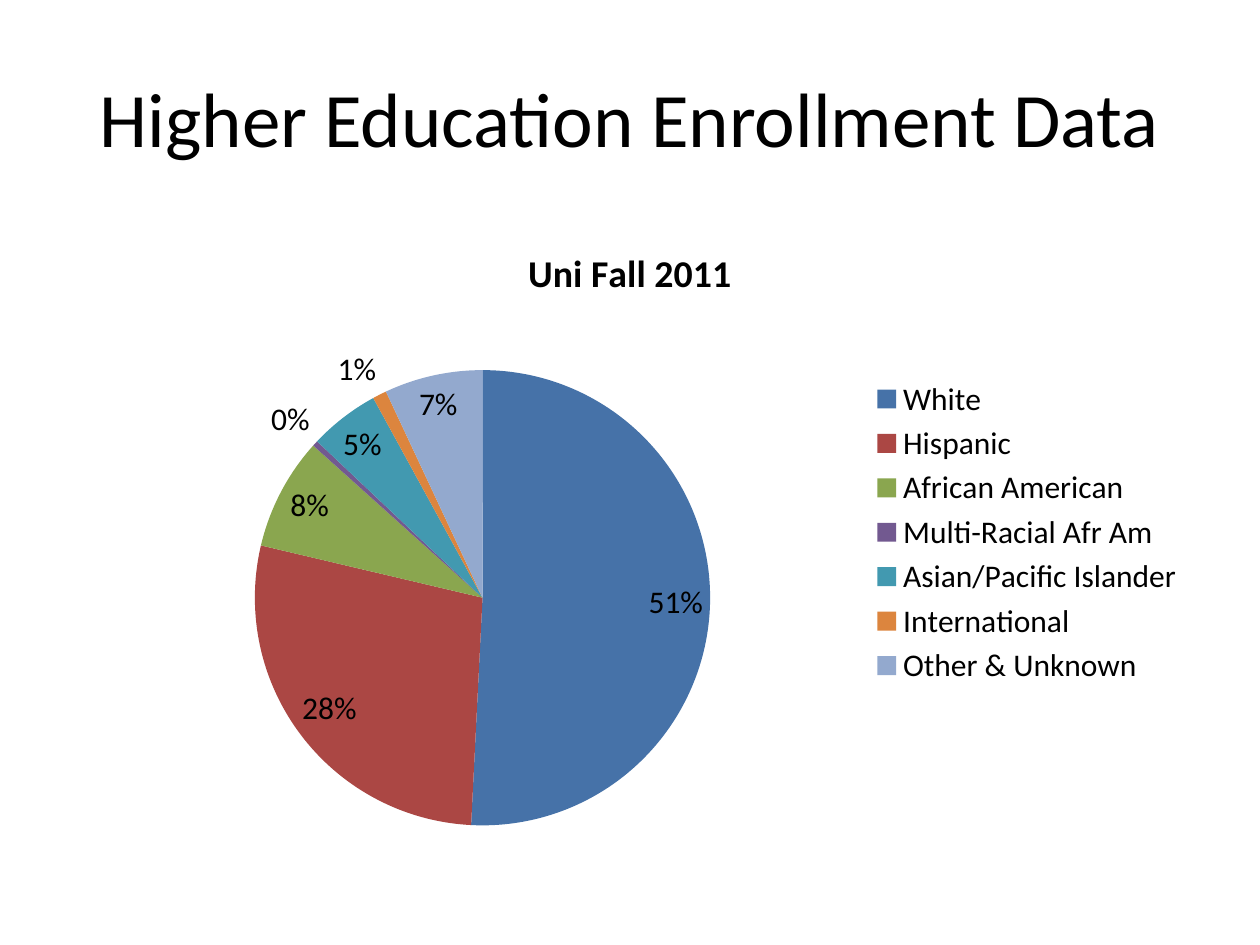
from pptx import Presentation
from pptx.chart.data import CategoryChartData
from pptx.dml.color import RGBColor
from pptx.enum.chart import XL_CHART_TYPE as ChartType
from pptx.enum.chart import XL_LABEL_POSITION as LabelPosition
from pptx.enum.chart import XL_LEGEND_POSITION as LegendPosition
from pptx.enum.text import MSO_ANCHOR as Anchor
from pptx.enum.text import PP_ALIGN as Align
from pptx.oxml import parse_xml
from pptx.oxml.ns import nsdecls
from pptx.util import Pt

TITLE = "Higher Education Enrollment Data"
CHART_TITLE = "Uni Fall 2011"
ENROLLMENT = [  # group, percent, slice colour
    ("White", 51, "4672A8"),
    ("Hispanic", 28, "AB4744"),
    ("African American", 8, "8AA64F"),
    ("Multi-Racial Afr Am", 0.4, "725990"),  # a thin slice, labelled 0%
    ("Asian/Pacific Islander", 5, "4299B0"),
    ("International", 1, "DC853E"),
    ("Other & Unknown", 7, "93A9CE"),
]
THEME = {
    "font": "Calibri",
    "text": "000000",
    "title_size": 44,
    "chart_title_size": 21.6,
    "chart_size": 18,
}
SLIDE_SIZE = (720, 540)
TITLE_BOX = (36, 21.6, 648, 90)
CHART_BOX = (36, 126, 648, 356.4)
PIE_AREA = {"x": 0.16, "y": 0.24, "w": 0.42, "h": 0.73}  # shares of the chart


def style_font(font, size, bold=False):
    font.name = THEME["font"]
    font.size = Pt(size)
    font.bold = bold
    font.color.rgb = RGBColor.from_string(THEME["text"])


def add_title(slide):
    text_box = slide.shapes.add_textbox(*map(Pt, TITLE_BOX))
    frame = text_box.text_frame
    frame.word_wrap = True
    frame.vertical_anchor = Anchor.MIDDLE
    paragraph = frame.paragraphs[0]
    paragraph.alignment = Align.CENTER
    run = paragraph.add_run()
    run.text = TITLE
    style_font(run.font, THEME["title_size"])


def place_pie(chart):
    """Fix the inner plot area, which python-pptx cannot position."""
    plot_area = chart.plots[0]._element.getparent()
    for layout in plot_area.findall("{*}layout"):
        plot_area.remove(layout)
    shares = "".join(f'<c:{key} val="{value}"/>' for key, value in PIE_AREA.items())
    plot_area.insert(0, parse_xml(
        f'<c:layout {nsdecls("c")}><c:manualLayout><c:layoutTarget val="inner"/>'
        f'<c:xMode val="edge"/><c:yMode val="edge"/>{shares}'
        "</c:manualLayout></c:layout>"))


def add_enrollment_chart(slide):
    groups, percents, colours = zip(*ENROLLMENT)
    data = CategoryChartData()
    data.categories = groups
    data.add_series("Series 1", percents)
    chart = slide.shapes.add_chart(ChartType.PIE, *map(Pt, CHART_BOX), data).chart
    style_font(chart.font, THEME["chart_size"])

    chart.has_title = True
    run = chart.chart_title.text_frame.paragraphs[0].add_run()
    run.text = CHART_TITLE
    style_font(run.font, THEME["chart_title_size"], bold=True)

    chart.has_legend = True
    chart.legend.position = LegendPosition.RIGHT
    chart.legend.include_in_layout = False
    style_font(chart.legend.font, THEME["chart_size"])

    plot = chart.plots[0]
    plot.vary_by_categories = True
    plot.has_data_labels = True
    labels = plot.data_labels
    labels.show_percentage = True
    labels.show_value = False
    labels.number_format = "0%"
    labels.number_format_is_linked = False
    labels.position = LabelPosition.BEST_FIT
    style_font(labels.font, THEME["chart_size"])

    for index, colour in enumerate(colours):
        fill = plot.series[0].points[index].format.fill
        fill.solid()
        fill.fore_color.rgb = RGBColor.from_string(colour)
    place_pie(chart)


def main():
    presentation = Presentation()
    presentation.slide_width, presentation.slide_height = map(Pt, SLIDE_SIZE)
    slide = presentation.slides.add_slide(presentation.slide_layouts[6])
    add_title(slide)
    add_enrollment_chart(slide)
    presentation.save("out.pptx")


if __name__ == "__main__":
    main()
